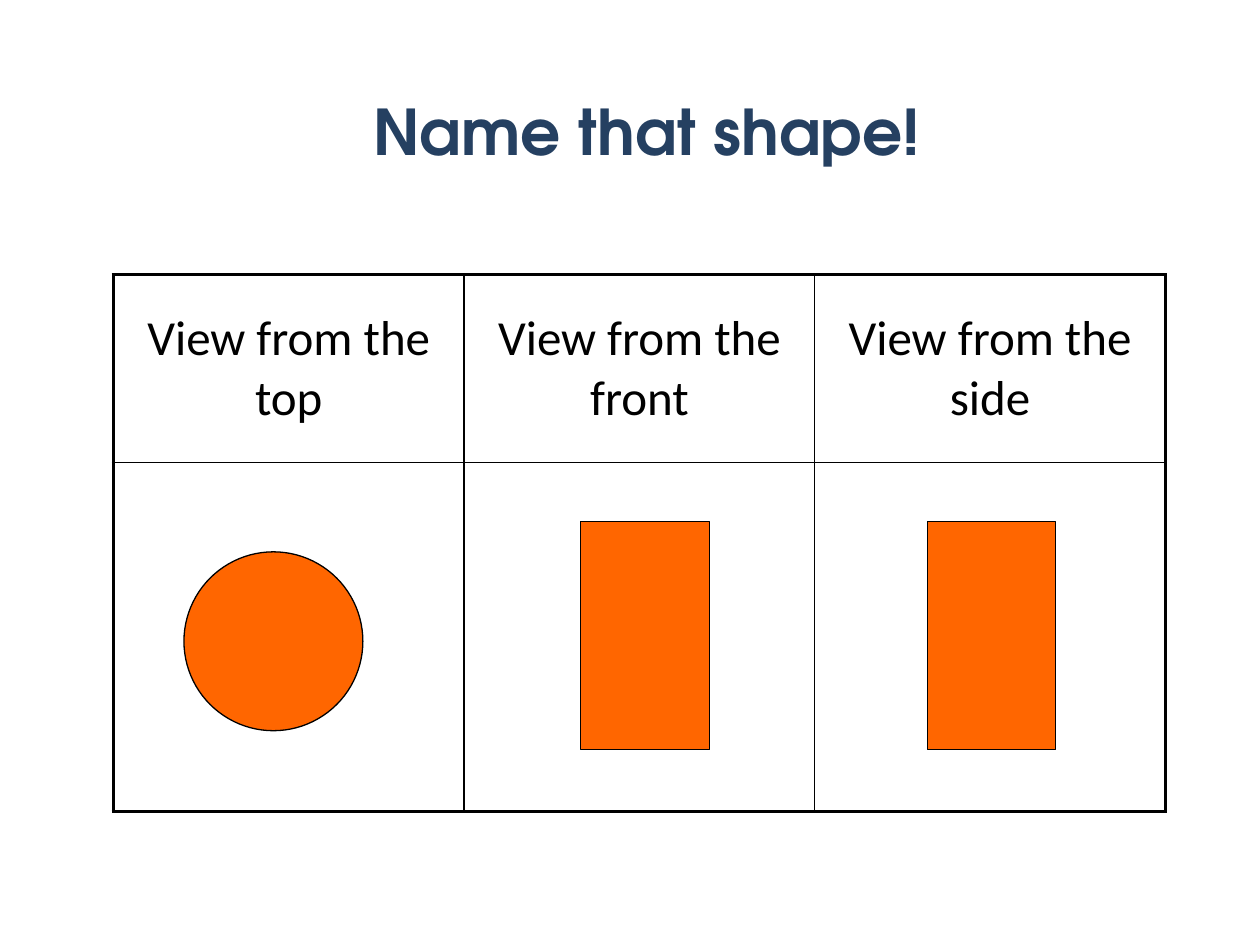
from dataclasses import dataclass

from lxml.etree import SubElement
from pptx import Presentation
from pptx.dml.color import RGBColor
from pptx.enum.shapes import MSO_SHAPE
from pptx.enum.text import MSO_ANCHOR, MSO_AUTO_SIZE, PP_ALIGN
from pptx.oxml.ns import qn
from pptx.slide import Slide
from pptx.table import _Cell
from pptx.text.text import TextFrame
from pptx.util import Inches, Pt


@dataclass(frozen=True)
class TextStyle:
    font: str
    size: float
    color: str
    bold: bool = False


@dataclass(frozen=True)
class Theme:
    title: TextStyle = TextStyle("TeX Gyre Adventor", 36, "254061", True)
    caption: TextStyle = TextStyle("Calibri", 28, "000000")
    solid: str = "FF6600"
    line: str = "000000"
    outline_width: float = 0.75
    inner_border: float = 1
    outer_border: float = 2.25


@dataclass(frozen=True)
class Area:
    left: float
    top: float
    width: float
    height: float

    def lengths(self) -> tuple[int, int, int, int]:
        return (
            int(SLIDE_WIDTH * self.left / 100),
            int(SLIDE_HEIGHT * self.top / 100),
            int(SLIDE_WIDTH * self.width / 100),
            int(SLIDE_HEIGHT * self.height / 100),
        )


@dataclass(frozen=True)
class View:
    caption: str
    geometry: MSO_SHAPE
    area: Area


THEME = Theme()
SLIDE_WIDTH, SLIDE_HEIGHT = Inches(10), Inches(7.5)
TITLE_AREA = Area(23.8, 9.07, 55.1, 9.47)
TABLE_AREA = Area(9, 29.07, 83.5, 56.8)
CAPTION_ROW_SHARE = 0.35
VIEWS = (
    View("View from the top", MSO_SHAPE.OVAL, Area(14.6, 58.4, 14.2, 18.93)),
    View("View from the front", MSO_SHAPE.RECTANGLE, Area(46.1, 55.2, 10.2, 24.13)),
    View("View from the side", MSO_SHAPE.RECTANGLE, Area(73.6, 55.2, 10.2, 24.13)),
)


def write_text(frame: TextFrame, text: str, style: TextStyle, space_before: float = 0) -> None:
    paragraph = frame.paragraphs[0]
    paragraph.alignment = PP_ALIGN.CENTER
    paragraph.space_before = Pt(space_before)
    run = paragraph.add_run()
    run.text = text
    run.font.name = style.font
    run.font.size = Pt(style.size)
    run.font.bold = style.bold
    run.font.color.rgb = RGBColor.from_string(style.color)


def add_title(slide: Slide, text: str) -> None:
    title = slide.shapes.title
    title.left, title.top, title.width, title.height = TITLE_AREA.lengths()
    frame = title.text_frame
    frame.word_wrap = False
    frame.auto_size = MSO_AUTO_SIZE.NONE
    frame.vertical_anchor = MSO_ANCHOR.MIDDLE
    write_text(frame, text, THEME.title)


def set_borders(cell: _Cell, outer_sides: dict[str, bool]) -> None:
    properties = cell._tc.get_or_add_tcPr()
    for side, is_outer in outer_sides.items():
        width = THEME.outer_border if is_outer else THEME.inner_border
        border = SubElement(properties, qn(f"a:ln{side}"), w=str(Pt(width)))
        fill = SubElement(border, qn("a:solidFill"))
        SubElement(fill, qn("a:srgbClr"), val=THEME.line)


def add_view_table(slide: Slide, views: tuple[View, ...]) -> None:
    row_count, column_count = 2, len(views)
    area = TABLE_AREA.lengths()
    table = slide.shapes.add_table(row_count, column_count, *area).table
    table.first_row = table.horz_banding = False
    caption_height = int(area[3] * CAPTION_ROW_SHARE)
    table.rows[0].height = caption_height
    table.rows[1].height = area[3] - caption_height
    for row in range(row_count):
        for column, view in enumerate(views):
            cell = table.cell(row, column)
            set_borders(cell, {
                "L": column == 0,
                "R": column == column_count - 1,
                "T": row == 0,
                "B": row == row_count - 1,
            })
            cell.fill.background()
            cell.vertical_anchor = MSO_ANCHOR.MIDDLE
            if row == 0:
                write_text(cell.text_frame, view.caption, THEME.caption, THEME.caption.size * 0.2)


def add_view_shape(slide: Slide, view: View) -> None:
    shape = slide.shapes.add_shape(view.geometry, *view.area.lengths())
    shape.shadow.inherit = False
    shape.fill.solid()
    shape.fill.fore_color.rgb = RGBColor.from_string(THEME.solid)
    shape.line.color.rgb = RGBColor.from_string(THEME.line)
    shape.line.width = Pt(THEME.outline_width)


def main() -> None:
    presentation = Presentation()
    presentation.slide_width, presentation.slide_height = SLIDE_WIDTH, SLIDE_HEIGHT
    slide = presentation.slides.add_slide(presentation.slide_layouts[5])
    add_title(slide, "Name that shape!")
    add_view_table(slide, VIEWS)
    for view in VIEWS:
        add_view_shape(slide, view)
    presentation.save("out.pptx")


if __name__ == "__main__":
    main()
